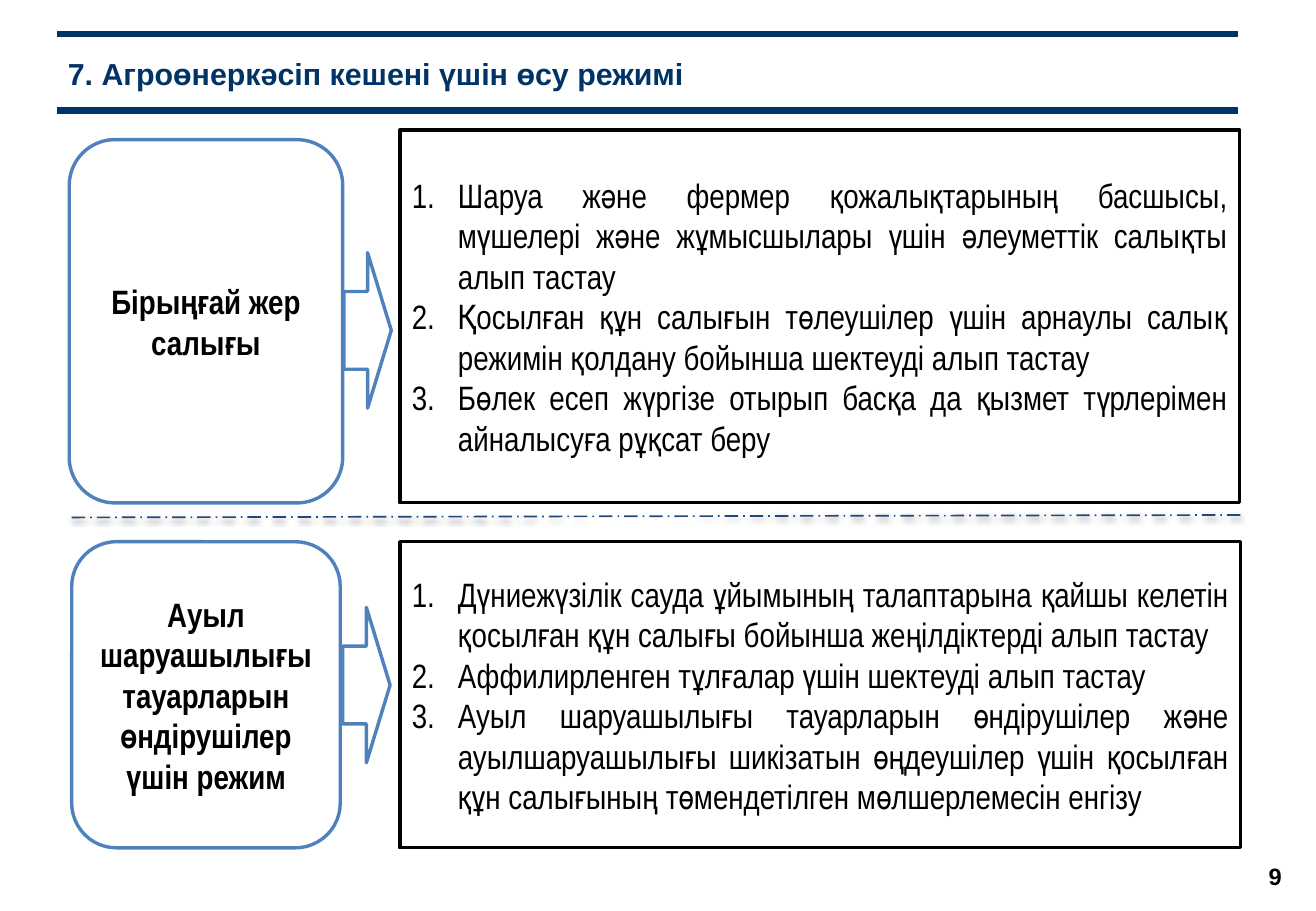
from lxml import etree
from pptx import Presentation
from pptx.dml.color import RGBColor
from pptx.enum.dml import MSO_LINE
from pptx.enum.shapes import MSO_CONNECTOR, MSO_SHAPE
from pptx.enum.text import MSO_ANCHOR, PP_ALIGN
from pptx.oxml.ns import qn
from pptx.util import Inches, Pt

RECT, ROUND, ARROW = MSO_SHAPE.RECTANGLE, MSO_SHAPE.ROUNDED_RECTANGLE, MSO_SHAPE.RIGHT_ARROW
LEFT, CENTER, JUSTIFY = PP_ALIGN.LEFT, PP_ALIGN.CENTER, PP_ALIGN.JUSTIFY
STRAIGHT = MSO_CONNECTOR.STRAIGHT
MIDDLE = MSO_ANCHOR.MIDDLE
DASH_DOT = MSO_LINE.LONG_DASH_DOT

NAVY, BLUE, DARK_BLUE, BLACK, WHITE = "003366", "4F81BD", "1F497D", "000000", "FFFFFF"
HEAD_FONT, BODY_FONT = "Arial", "Arial Narrow"
INDENT = Inches(0.38)

UNIFIED_TAX = [
    "Шаруа және фермер қожалықтарының басшысы, мүшелері және жұмысшылары үшін "
    "әлеуметтік салықты алып тастау",
    "Қосылған құн салығын төлеушілер үшін арнаулы салық режимін қолдану бойынша "
    "шектеуді алып тастау",
    "Бөлек есеп жүргізе отырып басқа да қызмет түрлерімен айналысуға рұқсат беру",
]
PRODUCERS = [
    "Дүниежүзілік сауда ұйымының талаптарына қайшы келетін қосылған құн салығы "
    "бойынша жеңілдіктерді алып тастау",
    "Аффилирленген тұлғалар үшін шектеуді алып тастау",
    "Ауыл шаруашылығы тауарларын өндірушілер және ауылшаруашылығы шикізатын "
    "өңдеушілер үшін қосылған құн салығының төмендетілген мөлшерлемесін енгізу",
]


def rgb(color):
    return RGBColor.from_string(color)


def add_box(s, kind, box, line=None):
    sp = s.shapes.add_shape(kind, *[Inches(v) for v in box])
    sp.shadow.inherit = False
    sp.fill.solid()
    sp.fill.fore_color.rgb = rgb(WHITE)
    if line:
        sp.line.color.rgb = rgb(line)
        sp.line.width = Pt(2)
    else:
        sp.line.fill.background()
    return sp


def add_line(s, start, end, color, width):
    ln = s.shapes.add_connector(STRAIGHT, *[Inches(v) for v in (*start, *end)])
    ln.line.color.rgb = rgb(color)
    ln.line.width = Pt(width)
    effects = etree.SubElement(ln._element.spPr, qn("a:effectLst"))
    return ln, effects


def write(sp, texts, size, font, color=BLACK, bold=False, align=CENTER):
    tf = sp.text_frame
    tf.word_wrap = True
    tf.vertical_anchor = MIDDLE
    tf.text = "\n".join(texts)
    for p in tf.paragraphs:
        p.alignment = align
        for r in p.runs:
            r.font.size = Pt(size)
            r.font.name = font
            r.font.bold = bold
            r.font.color.rgb = rgb(color)


def number_paragraphs(sp):
    for p in sp.text_frame.paragraphs:
        pPr = p._p.get_or_add_pPr()
        pPr.set("marL", str(INDENT))
        pPr.set("indent", str(-INDENT))
        etree.SubElement(pPr, qn("a:buAutoNum"), type="arabicPeriod")


def add_header(s, box, title):
    x, y, w, h = box
    # Rules above and below the title
    for rule_y, width in ((y, 3), (y + h, 4.5)):
        add_line(s, (x, rule_y), (x + w, rule_y), NAVY, width)
    sp = s.shapes.add_textbox(*[Inches(v) for v in (x - 0.01, y + 0.01, w, h)])
    write(sp, [title], 18, HEAD_FONT, NAVY, True, LEFT)


def add_regime(s, box, label_box, arrow_at, label, measures):
    # Regime name
    sp = add_box(s, ROUND, label_box, BLUE)
    write(sp, [label], 20, BODY_FONT, bold=True)
    # Numbered measures
    sp = add_box(s, RECT, box, BLACK)
    write(sp, measures, 20, BODY_FONT, align=JUSTIFY)
    number_paragraphs(sp)
    # Arrow from name to measures
    add_box(s, ARROW, (*arrow_at, 0.39, 1.28), BLUE)


def add_divider(s, start, end):
    ln, effects = add_line(s, start, end, DARK_BLUE, 1)
    ln.line.dash_style = DASH_DOT
    # Soft shadow straight below the line
    shadow = etree.SubElement(effects, qn("a:outerShdw"), blurRad=str(Pt(3.1)),
                              dist=str(Pt(1.6)), dir="5400000", rotWithShape="0")
    color = etree.SubElement(shadow, qn("a:srgbClr"), val=BLACK)
    etree.SubElement(color, qn("a:alpha"), val="38000")


def add_page_number(s, box, number):
    write(add_box(s, RECT, box), [number], 14, HEAD_FONT, bold=True)


def main():
    prs = Presentation()
    prs.slide_width, prs.slide_height = Inches(10.83), Inches(7.5)
    s = prs.slides.add_slide(prs.slide_layouts[6])

    add_header(s, (0.47, 0.28, 9.72, 0.63), "7. Агроөнеркәсіп кешені үшін өсу режимі")
    add_page_number(s, (10.17, 6.94, 0.65, 0.55), "9")
    add_regime(s, (3.29, 1.07, 6.91, 3.07), (0.57, 1.15, 2.25, 2.99), (2.83, 2.08),
               "Бірыңғай жер салығы", UNIFIED_TAX)
    add_divider(s, (0.59, 4.26), (10.22, 4.24))
    add_regime(s, (3.29, 4.46, 6.92, 2.52), (0.59, 4.46, 2.21, 2.52), (2.82, 5),
               "Ауыл шаруашылығы тауарларын өндірушілер үшін режим", PRODUCERS)

    prs.save("out.pptx")


if __name__ == "__main__":
    main()
